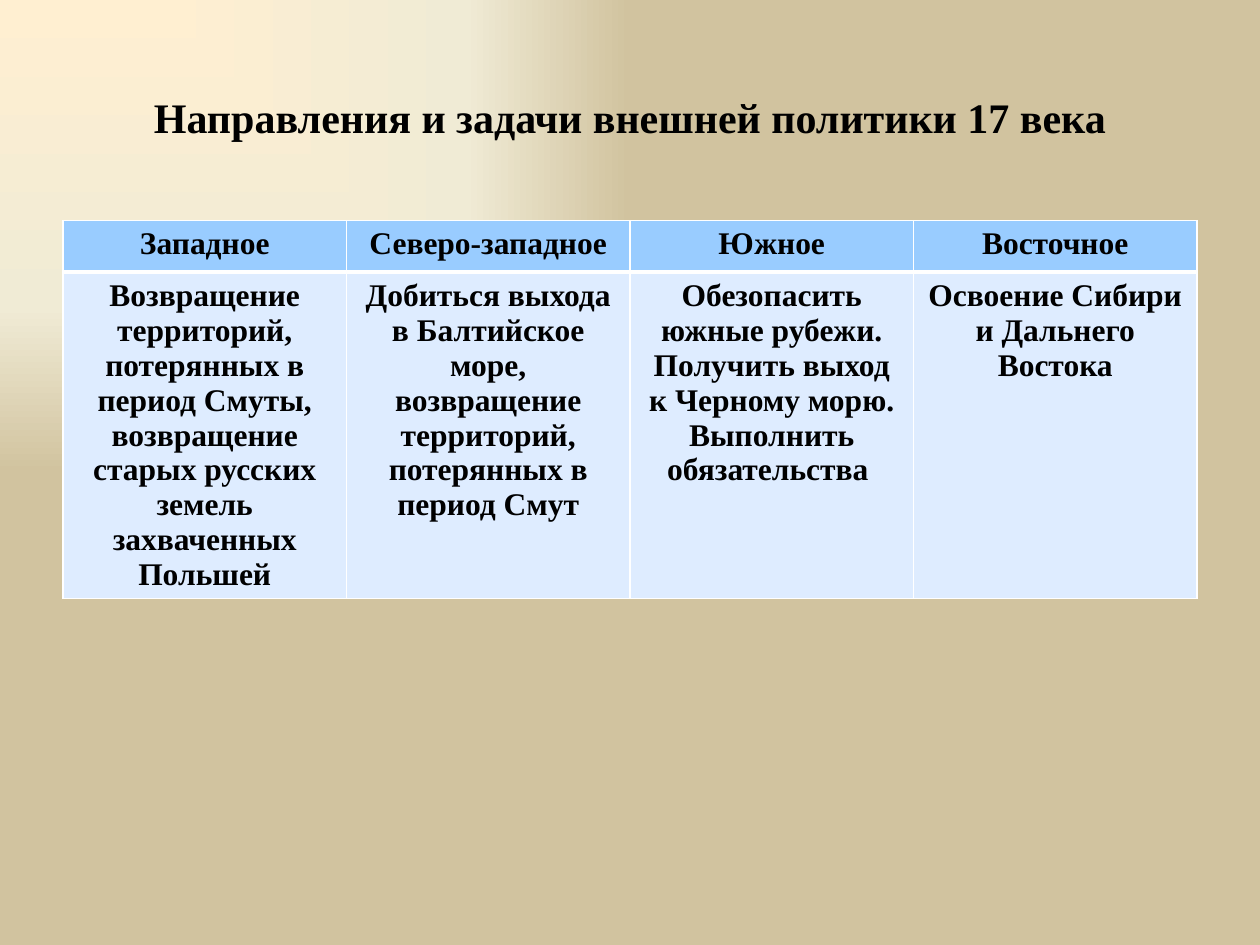
import pptx
import pptx.dml.color
import pptx.enum.text
import pptx.oxml
import pptx.oxml.ns
import pptx.util

RGB = pptx.dml.color.RGBColor
BLACK = RGB(0x00, 0x00, 0x00)
WHITE = RGB(0xFF, 0xFF, 0xFF)
HEADER_BLUE = RGB(0x99, 0xCC, 0xFF)
BODY_BLUE = RGB(0xDE, 0xEC, 0xFF)
CREAM = RGB(0xFF, 0xEF, 0xD1)
IVORY = RGB(0xF0, 0xEB, 0xD5)
SAND = RGB(0xD1, 0xC3, 0x9F)

DIRECTIONS = {
    "Западное": "Возвращение территорий, потерянных в период Смуты, "
                "возвращение старых русских земель захваченных Польшей",
    "Северо-западное": "Добиться выхода в Балтийское море, возвращение "
                       "территорий, потерянных в период Смут",
    "Южное": "Обезопасить южные рубежи. Получить выход к Черному морю.\n"
             "Выполнить обязательства ",
    "Восточное": "Освоение Сибири и Дальнего Востока",
}


class SlideBuilder:
    """Holds the style and the slide; boxes are shares of the slide's size."""

    font = "Times New Roman"
    title_size = 24
    cell_size = 18

    def __init__(self, prs):
        self.width, self.height = prs.slide_width, prs.slide_height
        self.s = prs.slides.add_slide(prs.slide_layouts[5])

    def box(self, left, top, width, height):
        return (round(left * self.width), round(top * self.height),
                round(width * self.width), round(height * self.height))

    def set_text(self, tf, text, size):
        tf.text = text
        for p in tf.paragraphs:
            p.alignment = pptx.enum.text.PP_ALIGN.CENTER
            p.font.name = self.font
            p.font.size = pptx.util.Pt(size)
            p.font.bold = True
            p.font.color.rgb = BLACK

    def corner_gradient(self, stops):
        """Fill the background with a gradient spreading from the top left."""
        self.s.background.fill.solid()
        solid = self.s.element.find(".//" + pptx.oxml.ns.qn("a:solidFill"))
        colors = "".join(
            f'<a:gs pos="{share * 1000}"><a:srgbClr val="{color}"/></a:gs>'
            for share, color in stops)
        solid.getparent().replace(solid, pptx.oxml.parse_xml(
            f'<a:gradFill {pptx.oxml.ns.nsdecls("a")} rotWithShape="1">'
            f'<a:gsLst>{colors}</a:gsLst><a:path path="rect">'
            '<a:fillToRect r="100000" b="100000"/></a:path></a:gradFill>'))

    def title(self, text, box):
        sp = self.s.shapes.title
        sp.left, sp.top, sp.width, sp.height = self.box(*box)
        tf = sp.text_frame
        tf.word_wrap = True
        tf.vertical_anchor = pptx.enum.text.MSO_ANCHOR.MIDDLE
        self.set_text(tf, text, self.title_size)

    def borders(self, cell, **widths):
        tc_pr = cell._tc.get_or_add_tcPr()
        for index, side in enumerate("LRTB"):
            width = pptx.util.Pt(widths.get(side, 1))
            tc_pr.insert(index, pptx.oxml.parse_xml(
                f'<a:ln{side} {pptx.oxml.ns.nsdecls("a")} w="{width}">'
                f'<a:solidFill><a:srgbClr val="{WHITE}"/></a:solidFill>'
                f'</a:ln{side}>'))

    def table(self, rows, box, row_shares):
        frame = self.s.shapes.add_table(len(rows), len(rows[0]), *self.box(*box))
        table = frame.table
        for i, texts in enumerate(rows):
            table.rows[i].height = round(row_shares[i] * self.height)
            for j, text in enumerate(texts):
                cell = table.cell(i, j)
                self.set_text(cell.text_frame, text, self.cell_size)
                cell.fill.solid()
                cell.fill.fore_color.rgb = BODY_BLUE if i else HEADER_BLUE
                edge = {"T": 3} if i == 1 else {"B": 3}
                self.borders(cell, **edge)


def main():
    prs = pptx.Presentation()
    prs.slide_width = pptx.util.Inches(10)
    prs.slide_height = pptx.util.Inches(7.5)
    slide = SlideBuilder(prs)
    slide.corner_gradient([(0, CREAM), (65, IVORY), (100, SAND)])
    slide.title("Направления и задачи внешней политики 17 века",
                (0.05, 0.04, 0.9, 1 / 6))
    row_shares = (0.41 / 7.5, 2.59 / 7.5)
    slide.table([list(DIRECTIONS), list(DIRECTIONS.values())],
                (0.05, 1.75 / 7.5, 0.9, sum(row_shares)), row_shares)
    prs.save("out.pptx")


if __name__ == "__main__":
    main()
